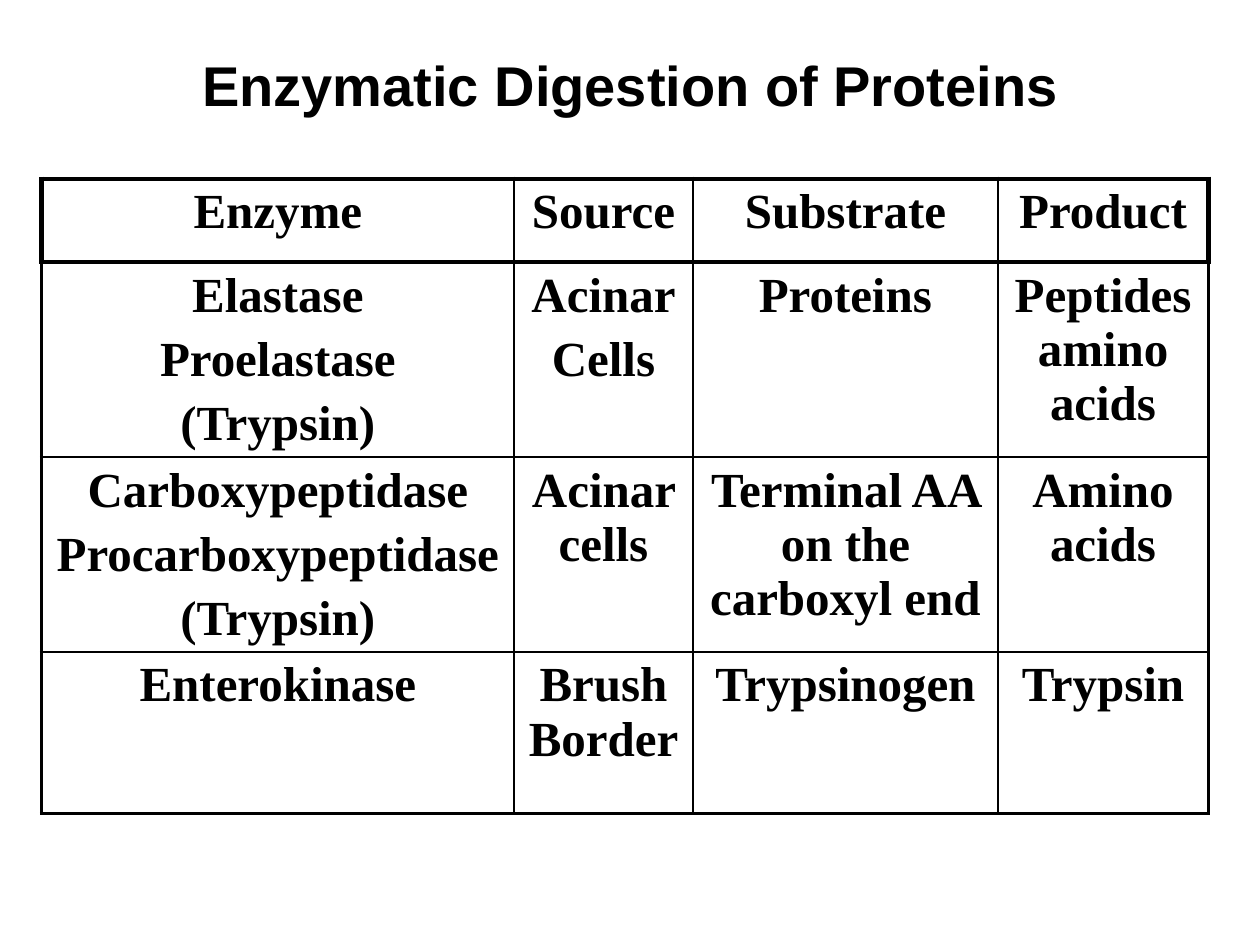
from lxml import etree
from pptx import Presentation
from pptx import util as u
from pptx.dml.color import RGBColor
from pptx.enum import text
from pptx.oxml.ns import qn

BLACK = RGBColor(0x00, 0x00, 0x00)
WHITE = RGBColor(0xFF, 0xFF, 0xFF)
THIN, MEDIUM, THICK = 1, 2.25, 3

COLUMN_WIDTHS = [3.75, 1.42, 2.42, 1.67]
ROW_HEIGHTS = [0.66, 1.28, 1.28, 1.28]
ENZYMES = [
    ["Enzyme", "Source", "Substrate", "Product"],
    ["Elastase\nProelastase\n(Trypsin)", "Acinar\nCells", "Proteins", "Peptides amino acids"],
    ["Carboxypeptidase\nProcarboxypeptidase\n(Trypsin)", "Acinar cells",
     "Terminal AA on the carboxyl end", "Amino acids"],
    ["Enterokinase", "Brush Border", "Trypsinogen", "Trypsin"],
]


def write(frame, content, font, size, before=0):
    """Fill a text frame with centred bold paragraphs, one per line."""
    frame.word_wrap = True
    frame.text = content
    for paragraph in frame.paragraphs:
        paragraph.alignment = text.PP_ALIGN.CENTER
        paragraph.space_before = u.Pt(before)
        for run in paragraph.runs:
            run.font.name = font
            run.font.size = u.Pt(size)
            run.font.bold = True
            run.font.color.rgb = BLACK


def set_borders(cell, **widths):
    """Draw cell borders; they must come before the cell's fill."""
    properties = cell._tc.get_or_add_tcPr()
    for position, side in enumerate("LRTB"):
        line = etree.Element(qn(f"a:ln{side}"), w=str(u.Pt(widths[side])))
        fill = etree.SubElement(line, qn("a:solidFill"))
        etree.SubElement(fill, qn("a:srgbClr"), val=str(BLACK))
        properties.insert(position, line)


class SlideBuilder:
    heading_font = "Arial"
    table_font = "Times New Roman"

    def __init__(self, presentation):
        self.slide = presentation.slides.add_slide(presentation.slide_layouts[5])
        background = self.slide.background.fill
        background.solid()
        background.fore_color.rgb = WHITE

    def title(self, content, left, top, width, height):
        title = self.slide.shapes.title
        title.left, title.top = u.Inches(left), u.Inches(top)
        title.width, title.height = u.Inches(width), u.Inches(height)
        title.text_frame.vertical_anchor = text.MSO_ANCHOR.MIDDLE
        write(title.text_frame, content, self.heading_font, 32)

    def table(self, rows, left, top, widths, heights):
        table = self.slide.shapes.add_table(
            len(rows), len(widths), u.Inches(left), u.Inches(top),
            u.Inches(sum(widths)), u.Inches(sum(heights))).table
        table.first_row = table.horz_banding = False
        for column, width in zip(table.columns, widths):
            column.width = u.Inches(width)
        for row, height in zip(table.rows, heights):
            row.height = u.Inches(height)

        last_row, last_column = len(rows) - 1, len(widths) - 1
        for r, row in enumerate(rows):
            # The header has a heavier frame than the body
            outer = THICK if r == 0 else MEDIUM
            for c, content in enumerate(row):
                cell = table.cell(r, c)
                write(cell.text_frame, content, self.table_font, 28, before=5.6)
                cell.fill.background()
                set_borders(
                    cell,
                    L=outer if c == 0 else THIN,
                    R=outer if c == last_column else THIN,
                    T=THICK if r <= 1 else THIN,
                    B=outer if r in (0, last_row) else THIN)


def main():
    presentation = Presentation()
    presentation.slide_width = u.Inches(10)
    presentation.slide_height = u.Inches(7.5)
    builder = SlideBuilder(presentation)

    # Heading
    builder.title("Enzymatic Digestion of Proteins", 0.42, 0.33, 9.17, 0.67)

    # Enzymes with their source, substrate and product
    builder.table(ENZYMES, 0.33, 1.42, COLUMN_WIDTHS, ROW_HEIGHTS)

    presentation.save("out.pptx")


if __name__ == "__main__":
    main()
